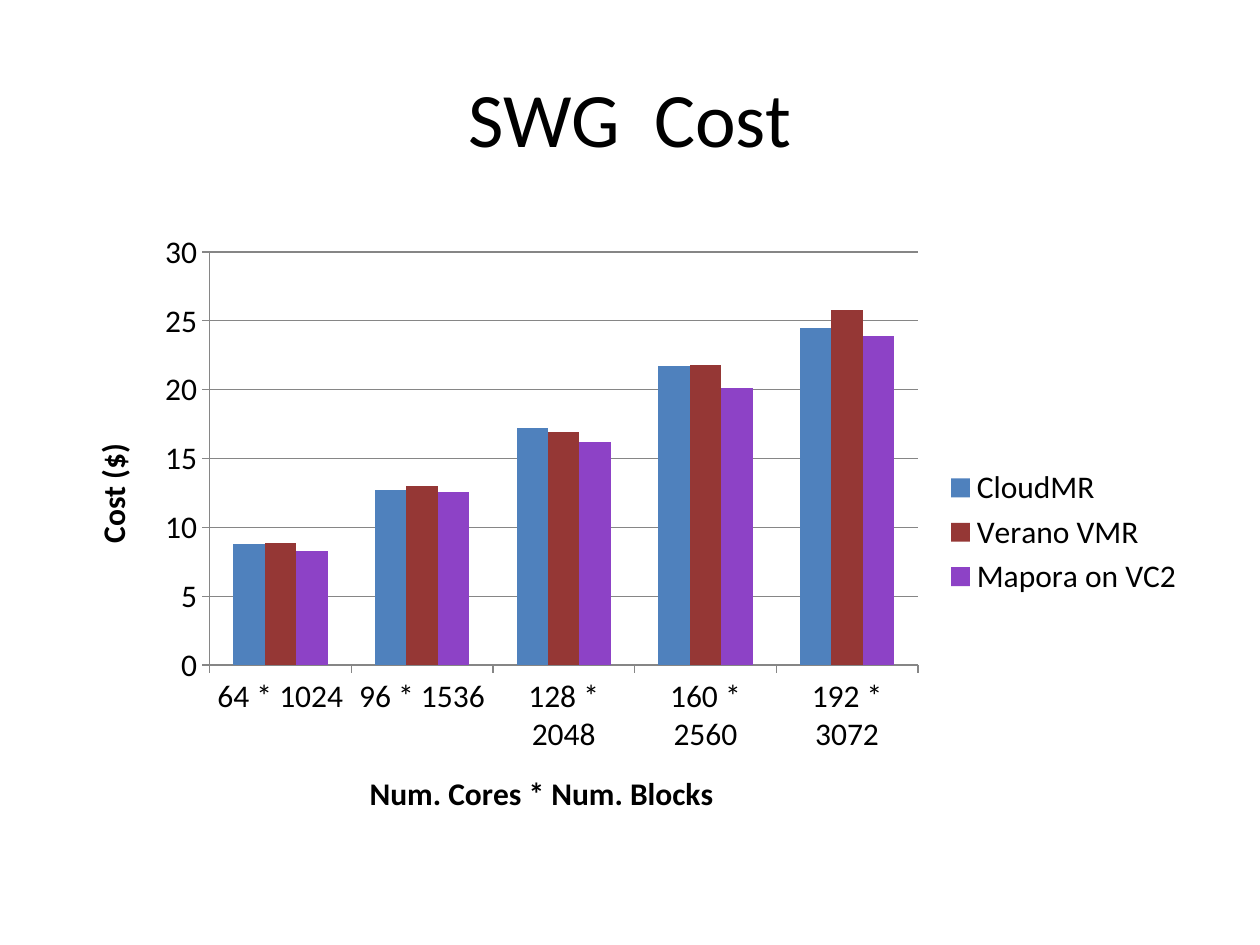
import dataclasses

import pptx
import pptx.chart.axis
import pptx.chart.data
import pptx.dml.color
import pptx.enum.chart
import pptx.enum.text
import pptx.util

Inches = pptx.util.Inches
FONT = "Calibri"
BLACK = "000000"
AXIS_GREY = "868686"


@dataclasses.dataclass(frozen=True)
class Platform:
    name: str
    costs: tuple[float, ...]
    color: str


RUN_SIZES = ("64 * 1024", "96 * 1536", "128 * 2048", "160 * 2560", "192 * 3072")
PLATFORMS = (
    Platform("CloudMR", (8.8, 12.7, 17.2, 21.7, 24.5), "4F81BD"),
    Platform("Verano VMR", (8.9, 13, 16.9, 21.8, 25.8), "953735"),
    Platform("Mapora on VC2", (8.3, 12.6, 16.2, 20.1, 23.9), "8D42C6"),
)


def rgb(value: str) -> pptx.dml.color.RGBColor:
    return pptx.dml.color.RGBColor.from_string(value)


def format_font(font, size: float, bold: bool = False) -> None:
    settings = {"name": FONT, "size": pptx.util.Pt(size), "bold": bold}
    for attribute, value in settings.items():
        setattr(font, attribute, value)
    font.color.rgb = rgb(BLACK)


def format_line(line) -> None:
    line.color.rgb = rgb(AXIS_GREY)
    line.width = pptx.util.Pt(0.75)


def format_axis(axis, caption: str) -> None:
    axis.major_tick_mark = pptx.enum.chart.XL_TICK_MARK.OUTSIDE
    format_line(axis.format.line)
    format_font(axis.tick_labels.font, 18)
    title_frame = axis.axis_title.text_frame
    title_frame.text = caption
    format_font(title_frame.paragraphs[0].runs[0].font, 18, bold=True)


def add_title(slide, wording: str) -> None:
    heading = slide.shapes.title
    place = {"left": 0.5, "top": 0.3, "width": 9, "height": 1.25}
    for attribute, length in place.items():
        setattr(heading, attribute, Inches(length))
    frame = heading.text_frame
    frame.text = wording
    frame.vertical_anchor = pptx.enum.text.MSO_ANCHOR.MIDDLE
    paragraph = frame.paragraphs[0]
    paragraph.alignment = pptx.enum.text.PP_ALIGN.CENTER
    format_font(paragraph.runs[0].font, 44)


def add_cost_chart(slide) -> None:
    costs = pptx.chart.data.CategoryChartData()
    costs.categories = RUN_SIZES
    for platform in PLATFORMS:
        costs.add_series(platform.name, platform.costs)
    chart = slide.shapes.add_chart(
        pptx.enum.chart.XL_CHART_TYPE.COLUMN_CLUSTERED,
        Inches(0.5), Inches(1.75), Inches(9), Inches(4.95), costs,
    ).chart
    chart.has_title = False
    format_font(chart.font, 18)

    # Columns
    plot = chart.plots[0]
    for attribute, value in {"gap_width": 150, "overlap": 0, "vary_by_categories": False}.items():
        setattr(plot, attribute, value)
    for columns, platform in zip(plot.series, PLATFORMS):
        columns.format.fill.solid()
        columns.format.fill.fore_color.rgb = rgb(platform.color)

    # Axes and gridlines
    format_axis(chart.category_axis, "Num. Cores * Num. Blocks")
    format_axis(chart.value_axis, "Cost ($)")
    chart.value_axis.has_major_gridlines = True
    format_line(chart.value_axis.major_gridlines.format.line)

    # Legend
    chart.has_legend = True
    chart.legend.position = pptx.enum.chart.XL_LEGEND_POSITION.RIGHT
    chart.legend.include_in_layout = False
    format_font(chart.legend.font, 18)


def main() -> None:
    deck = pptx.Presentation()
    deck.slide_width, deck.slide_height = Inches(10), Inches(7.5)
    slide = deck.slides.add_slide(deck.slide_layouts.get_by_name("Title Only"))
    add_title(slide, "SWG  Cost")
    add_cost_chart(slide)
    deck.save("out.pptx")


if __name__ == "__main__":
    main()
